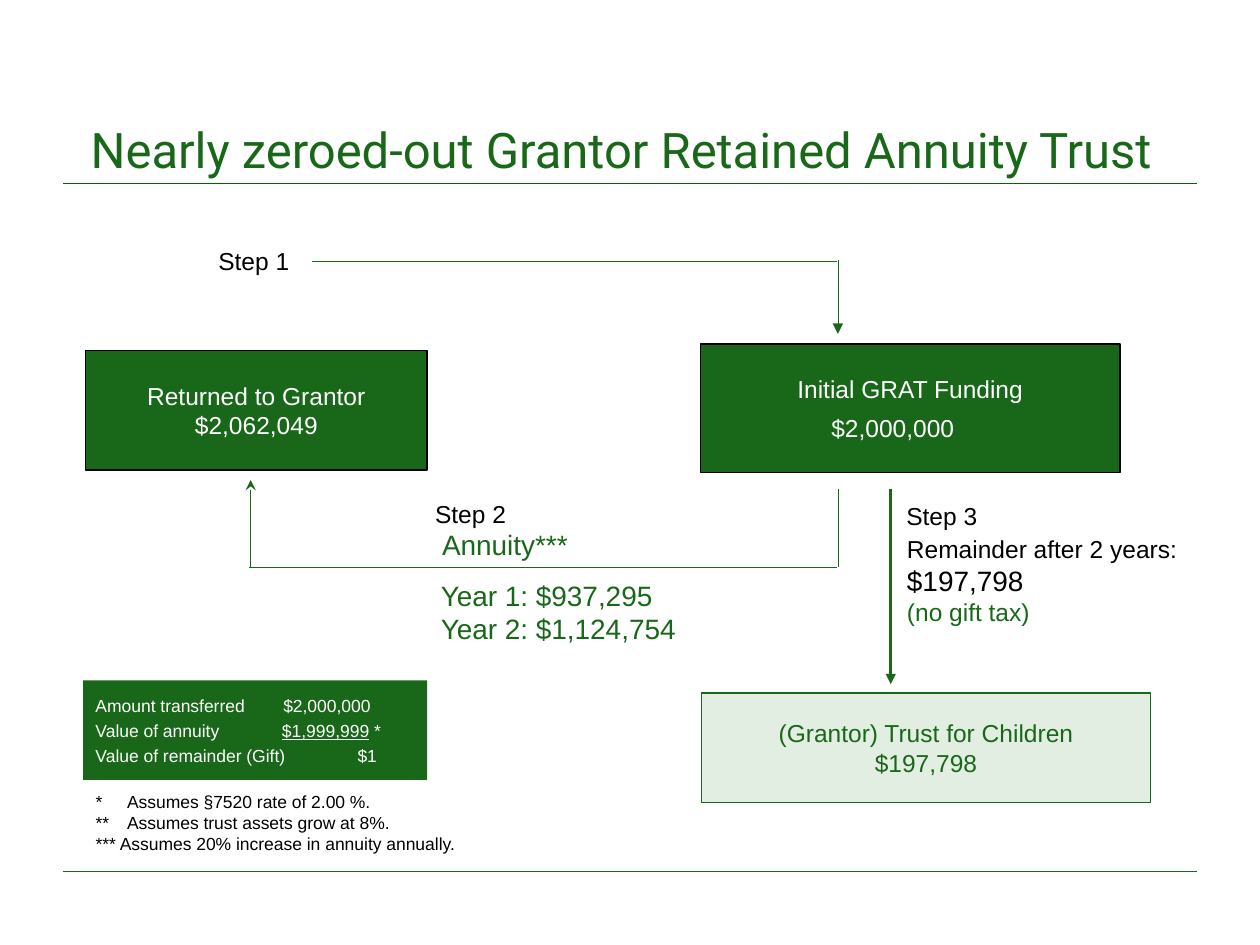
from lxml.etree import SubElement
from pptx import Presentation
from pptx.dml.color import RGBColor
from pptx.enum.shapes import MSO_CONNECTOR as Connector, MSO_SHAPE as Shape
from pptx.enum.text import MSO_ANCHOR as Anchor, MSO_AUTO_SIZE as AutoSize, PP_ALIGN as Align
from pptx.oxml.ns import qn
from pptx.util import Inches, Pt

GREEN, PALE, BLACK, WHITE = "196819", "E3EEE3", "000000", "FFFFFF"


def color(value):
    """Turn a hex string into a colour."""
    return RGBColor.from_string(value)


class Page:
    """Draws styled elements on a slide of 100 columns by 75 rows."""

    def __init__(self, deck):
        """Add a title-only slide to the deck."""
        self.slide = deck.slides.add_slide(deck.slide_layouts[5])
        self.column = deck.slide_width / 100
        self.row = deck.slide_height / 75

    def place(self, left, top, width, height):
        """Convert grid cells to slide lengths."""
        return (round(left * self.column), round(top * self.row),
                round(width * self.column), round(height * self.row))

    def frame(self, box, wrap=True, anchor=Anchor.TOP, inset=0.05):
        """Set the text frame of a box and return it."""
        frame = box.text_frame
        frame.auto_size = AutoSize.NONE
        frame.word_wrap = wrap
        frame.vertical_anchor = anchor
        frame.margin_left = frame.margin_right = Inches(0.1)
        frame.margin_top = frame.margin_bottom = Inches(inset)
        return frame

    def paragraph(self, frame, spans, size, ink, align=Align.LEFT, font="Arial",
                  tab=None, indent=0, before=0, after=0, spacing=None):
        """Write one paragraph run by run; a span is text or (text, underline)."""
        para = frame.paragraphs[0]
        if para.runs:
            para = frame.add_paragraph()
        properties = para._p.get_or_add_pPr()
        if tab:
            stops = SubElement(properties, qn("a:tabLst"))
            SubElement(stops, qn("a:tab"), pos=str(Inches(tab)), algn="l")
        if indent:
            properties.set("marL", str(Inches(indent)))
        para.alignment = align
        if before:
            para.space_before = Pt(before)
        if after:
            para.space_after = Pt(after)
        if spacing:
            para.line_spacing = spacing
        for item in spans:
            text, underline = item if isinstance(item, tuple) else (item, False)
            span = para.add_run()
            span.text = text
            span.font.name = font
            span.font.size = Pt(size)
            span.font.color.rgb = color(ink)
            if underline:
                span.font.underline = True

    def title(self, area, text):
        """Move and format the title placeholder."""
        box = self.slide.shapes.title
        box.left, box.top, box.width, box.height = self.place(*area)
        self.paragraph(self.frame(box), [text], 28, GREEN, font="Roboto")

    def label(self, area, *lines, wrap=True, align=Align.LEFT, tab=None):
        """Add a text box with (text, size, ink) lines."""
        frame = self.frame(self.slide.shapes.add_textbox(*self.place(*area)), wrap)
        for text, size, ink in lines:
            self.paragraph(frame, [text], size, ink, align, tab=tab)

    def panel(self, area, fill, edge=None, anchor=Anchor.MIDDLE, inset=0.05):
        """Add a filled rectangle and return its text frame."""
        box = self.slide.shapes.add_shape(Shape.RECTANGLE, *self.place(*area))
        box.shadow.inherit = False
        box.fill.solid()
        box.fill.fore_color.rgb = color(fill)
        if edge:
            box.line.color.rgb = color(edge)
            box.line.width = Pt(0.75)
        else:
            box.line.fill.background()
        return self.frame(box, anchor=anchor, inset=inset)

    def party(self, area, name, amount, fill, edge, ink):
        """Add a rectangle with a centred name and amount."""
        frame = self.panel(area, fill, edge)
        for text in (name, amount):
            self.paragraph(frame, [text], 14, ink, Align.CENTER)

    def line(self, start, end, width=0.25, ink=GREEN, head=None):
        """Add a straight line, with an optional arrowhead at its end."""
        link = self.slide.shapes.add_connector(
            Connector.STRAIGHT, *self.place(*start, *end))
        link.line.color.rgb = color(ink)
        link.line.width = Pt(width)
        if head:
            SubElement(link.line._get_or_add_ln(), qn("a:tailEnd"), type=head)
        SubElement(link._element.spPr, qn("a:effectLst"))


def main():
    """Build the trust diagram and save it."""
    deck = Presentation()
    deck.slide_width, deck.slide_height = Inches(10), Inches(7.5)
    page = Page(deck)

    page.line((5, 14.6), (95, 14.6), 0.5, "006600")
    page.line((5, 69.2), (95, 69.2), 0.5)
    page.title((6.2, 9, 90.7, 5.6), "Nearly zeroed-out Grantor Retained Annuity Trust")

    page.line((24.8, 20.7), (66.4, 20.7))
    page.line((66.5, 20.6), (66.5, 26.5), head="triangle")
    page.line((66.5, 45), (66.5, 38.8))
    page.line((19.8, 45), (66.4, 45))
    page.line((19.9, 45.1), (19.9, 38.1), head="stealth")
    page.line((70.7, 38.8), (70.7, 54.3), 1.5, head="triangle")

    for number, area in enumerate(((16.4, 19, 7.5, 3.3), (33.5, 39.1, 7.7, 3.4),
                                   (70.9, 39.3, 7.7, 3.4)), start=1):
        page.label(area, (f"Step {number}", 14, BLACK), wrap=False, align=Align.CENTER)
    page.label((34.1, 41.4, 12.8, 3.7), ("Annuity***", 16, GREEN), wrap=False)
    page.label((34, 45.4, 22.8, 6.4), ("Year 1: $937,295", 16, GREEN),
               ("Year 2: $1,124,754", 16, GREEN))
    page.label((71, 41.9, 24.7, 8.4), ("Remainder after 2 years:", 14, BLACK),
               ("$197,798", 16, BLACK), ("(no gift tax)", 14, GREEN))

    page.party((6.8, 27.8, 27.1, 9.5), "Returned to Grantor", "$2,062,049",
               GREEN, BLACK, WHITE)
    page.party((55.7, 55, 35.6, 8.7), "(Grantor) Trust for Children", "$197,798",
               PALE, GREEN, GREEN)
    funding = page.panel((55.6, 27.3, 33.3, 10.2), GREEN, BLACK)
    page.paragraph(funding, ["Initial GRAT Funding"], 14, WHITE, indent=0.67)
    page.paragraph(funding, ["$2,000,000"], 14, WHITE, indent=0.94, before=5.2)

    summary = page.panel((6.6, 54, 27.3, 7.9), GREEN, anchor=Anchor.TOP, inset=0.1)
    for spans, tab in ((["Amount transferred\t$2,000,000"], 1.49),
                       (["Value of annuity\t", ("$1,999,999", True), " *"], 1.48),
                       (["Value of remainder (Gift)\t$1"], 2.08)):
        page.paragraph(summary, spans, 10, WHITE, tab=tab, after=1, spacing=1.1)

    page.label((6.6, 62.3, 89.1, 6), ("*\tAssumes §7520 rate of 2.00 %.", 10, BLACK),
               ("**\tAssumes trust assets grow at 8%.", 10, BLACK),
               ("*** Assumes 20% increase in annuity annually.", 10, BLACK), tab=0.25)
    deck.save("out.pptx")


if __name__ == "__main__":
    main()
